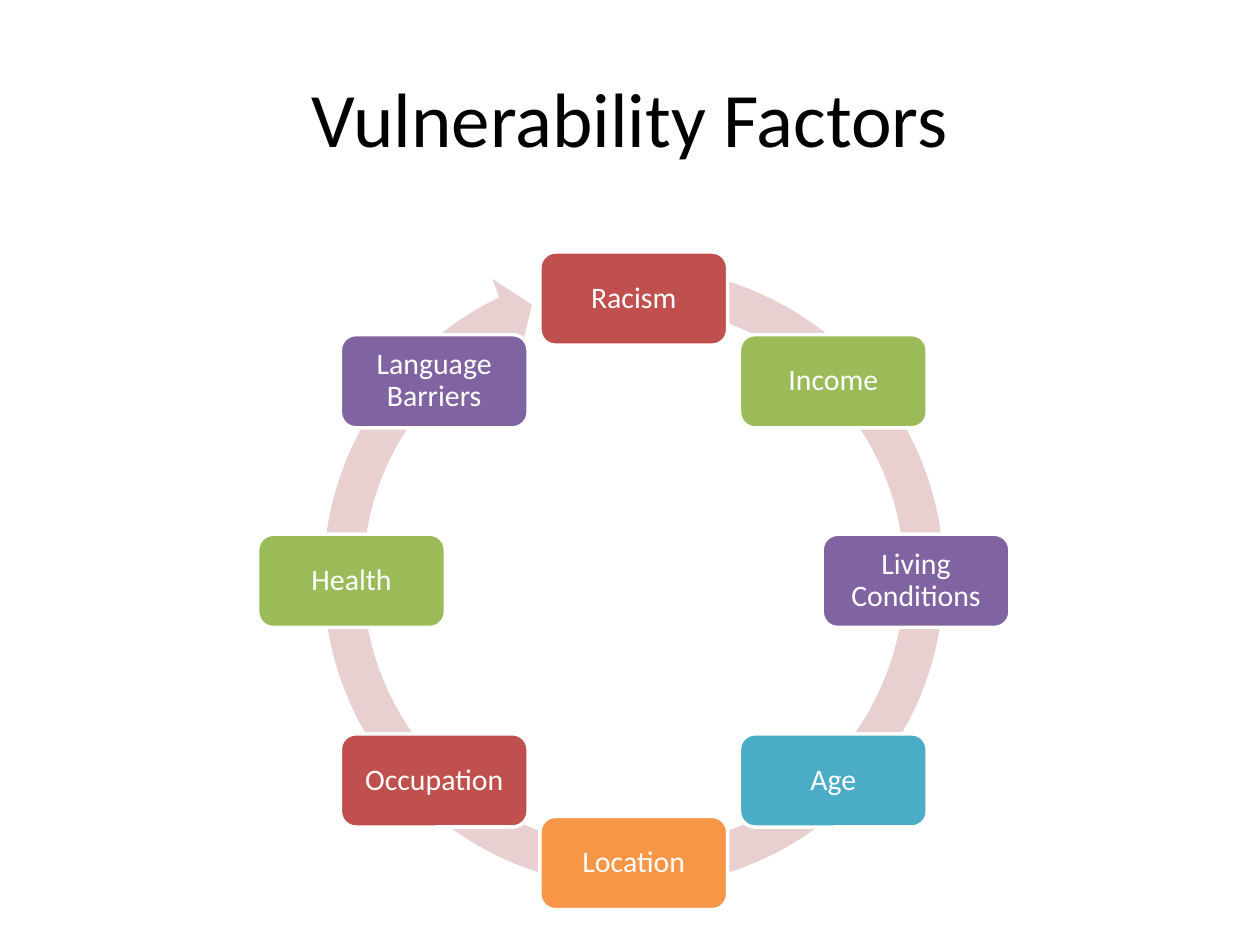
"""Build a slide with eight vulnerability factors around a circular arrow."""
from math import cos, pi, sin

from pptx import Presentation
from pptx.dml.color import RGBColor
from pptx.enum.shapes import MSO_SHAPE as Shape
from pptx.enum.text import MSO_ANCHOR as Anchor, PP_ALIGN as Align
from pptx.util import Inches, Pt

FACTORS = [
    ("Racism", "C0504D"),
    ("Income", "9BBB59"),
    ("Living Conditions", "8064A2"),
    ("Age", "4BACC6"),
    ("Location", "F79646"),
    ("Occupation", "C0504D"),
    ("Health", "9BBB59"),
    ("Language Barriers", "8064A2"),
]
CENTER_X, CENTER_Y, RADIUS = 5.03, 4.61, 2.24
BOX_WIDTH, BOX_HEIGHT = 1.49, 0.74
ARROW_SIZE = 5.24
ARROW_ADJUSTMENTS = (0.06, 3.31, 146.39, 168.8, 0.06)


def color(value):
    return RGBColor.from_string(value)


def write(frame, text, size=17, ink="FFFFFF", font="Calibri", spacing=None, inset=None):
    frame.word_wrap = True
    frame.vertical_anchor = Anchor.MIDDLE
    if inset is not None:
        frame.margin_left = frame.margin_right = Inches(inset)
        frame.margin_top = frame.margin_bottom = Inches(inset)
    para = frame.paragraphs[0]
    para.alignment = Align.CENTER
    para.line_spacing = spacing
    span = para.add_run()
    span.text = text
    span.font.name = font
    span.font.size = Pt(size)
    span.font.color.rgb = color(ink)


class CyclePage:
    def __init__(self, deck):
        self.page = deck.slides.add_slide(deck.slide_layouts[5])

    def title(self, text):
        box = self.page.shapes.title
        box.left, box.top = Inches(0.5), Inches(0.3)
        box.width, box.height = Inches(9), Inches(1.25)
        write(box.text_frame, text, size=44, ink="000000")

    def centered(self, kind, x, y, width, height, fill):
        shape = self.page.shapes.add_shape(
            kind, Inches(x - width / 2), Inches(y - height / 2), Inches(width), Inches(height)
        )
        shape.shadow.inherit = False
        shape.fill.solid()
        shape.fill.fore_color.rgb = color(fill)
        return shape

    def arrow(self):
        shape = self.centered(
            Shape.CIRCULAR_ARROW, CENTER_X, CENTER_Y - 0.03, ARROW_SIZE, ARROW_SIZE, "E8D0D0"
        )
        shape.line.fill.background()
        for index, value in enumerate(ARROW_ADJUSTMENTS):
            shape.adjustments[index] = value

    def factor(self, index, text, fill):
        angle = 2 * pi * index / len(FACTORS)
        x = CENTER_X + RADIUS * sin(angle)
        y = CENTER_Y - RADIUS * cos(angle)
        shape = self.centered(Shape.ROUNDED_RECTANGLE, x, y, BOX_WIDTH, BOX_HEIGHT, fill)
        shape.line.color.rgb = color("FFFFFF")
        shape.line.width = Pt(2)
        write(shape.text_frame, text, spacing=0.9, inset=0.07)


def main():
    deck = Presentation()
    deck.slide_width, deck.slide_height = Inches(10), Inches(7.5)
    cycle = CyclePage(deck)
    cycle.title("Vulnerability Factors")
    cycle.arrow()
    for index, (text, fill) in enumerate(FACTORS):
        cycle.factor(index, text, fill)
    deck.save("out.pptx")


if __name__ == "__main__":
    main()
